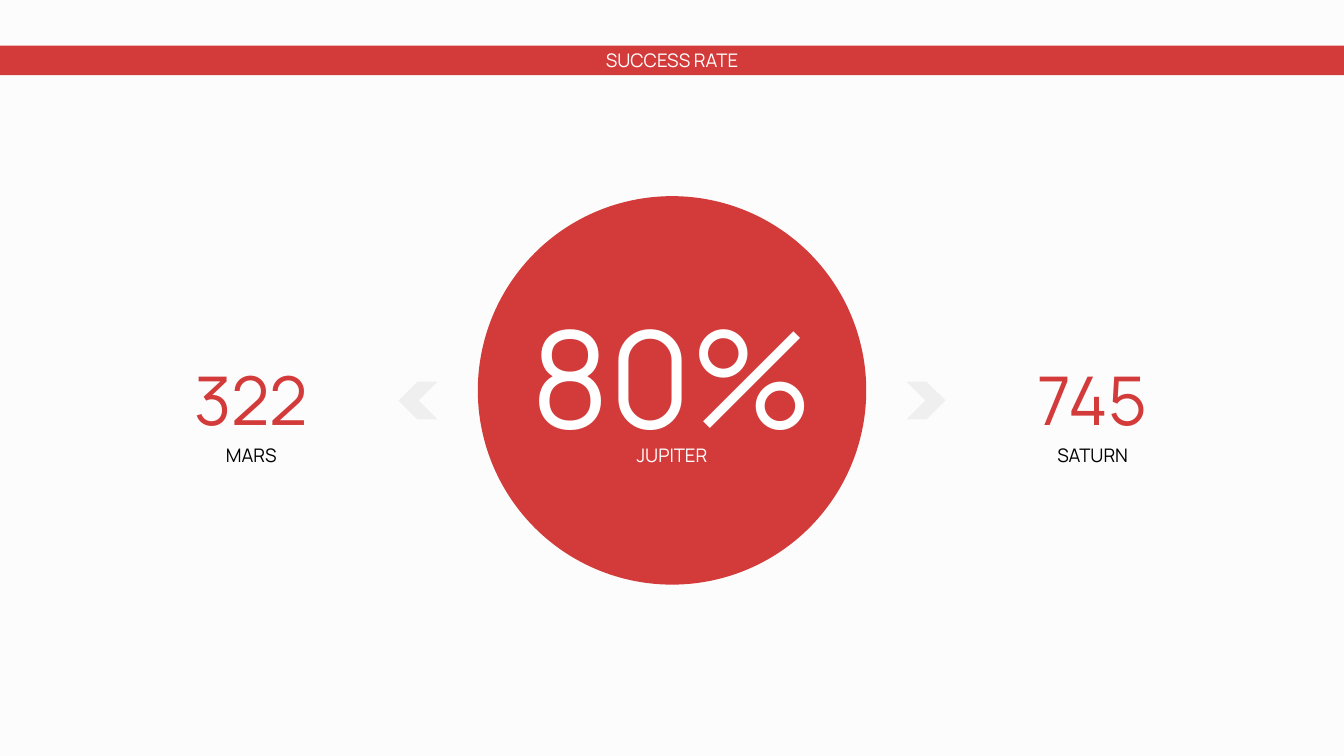
from pptx import Presentation
from pptx.dml.color import RGBColor
from pptx.enum.shapes import MSO_SHAPE
from pptx.enum.text import MSO_ANCHOR, MSO_AUTO_SIZE, PP_ALIGN
from pptx.util import Inches, Pt

COLORS = {"back": "FCFCFC", "red": "D33B3B", "white": "FFFFFF",
          "black": "000000", "gray": "EFEFEF"}
FONT = "Manrope"
WIDTH = 10
HEIGHT = WIDTH * 9 / 16
MID = WIDTH / 2


def paint(fill, color):
    fill.solid()
    fill.fore_color.rgb = RGBColor.from_string(COLORS[color])


def add_shape(slide, kind, left, top, width, height, color):
    shape = slide.shapes.add_shape(
        kind, Inches(left), Inches(top), Inches(width), Inches(height))
    shape.shadow.inherit = False
    paint(shape.fill, color)
    shape.line.fill.background()
    return shape


def set_text(box, text, size, color, anchor=MSO_ANCHOR.TOP):
    frame = box.text_frame
    frame.text = text
    frame.word_wrap = True
    frame.auto_size = MSO_AUTO_SIZE.NONE
    frame.vertical_anchor = anchor
    frame.margin_left = frame.margin_right = Inches(0.1)
    frame.margin_top = frame.margin_bottom = Inches(0.1)
    para = frame.paragraphs[0]
    para.alignment = PP_ALIGN.CENTER
    para.font.name = FONT
    para.font.size = Pt(size)
    para.font.color.rgb = RGBColor.from_string(COLORS[color])


def add_title(slide, text):
    """Fill the title placeholder and raise it above the bar."""
    title = slide.shapes.title
    title.left, title.top = Inches(0.34), Inches(0.26)
    title.width, title.height = Inches(9.32), Inches(0.36)
    set_text(title, text, 10, "white")
    slide.shapes._spTree.append(title._element)


def add_text(slide, mid, top, width, height, *style):
    box = slide.shapes.add_textbox(
        Inches(mid - width / 2), Inches(top), Inches(width), Inches(height))
    set_text(box, *style)


def add_stat(slide, mid, value, name, size, height, colors):
    """Place a large number, ending at a shared base, over its label."""
    add_text(slide, mid, 3.15 - height, 2.62, height,
             value, size, colors[0], MSO_ANCHOR.MIDDLE)
    add_text(slide, mid, 3.2, 1.8, 0.49, name, 10, colors[1])


def add_arrow(slide, mid, turn):
    width = 0.29
    arrow = add_shape(slide, MSO_SHAPE.CHEVRON, mid - width / 2, 2.84,
                      width, 0.28, "gray")
    arrow.rotation = turn


def main():
    prs = Presentation()
    prs.slide_width, prs.slide_height = Inches(WIDTH), Inches(HEIGHT)
    slide = prs.slides.add_slide(prs.slide_layouts[5])
    paint(slide.background.fill, "back")

    add_shape(slide, MSO_SHAPE.RECTANGLE, 0, 0.34, WIDTH, 0.22, "red")
    add_title(slide, "SUCCESS RATE")
    size = 2.89
    add_shape(slide, MSO_SHAPE.OVAL, MID - size / 2, 1.46, size, size, "red")
    add_stat(slide, MID, "80%", "JUPITER", 72, 0.73, ("white", "white"))

    sides = [(-1, "322", "MARS", 180), (1, "745", "SATURN", 0)]
    for side, value, name, turn in sides:
        add_stat(slide, MID + side * 3.13, value, name, 36, 0.36,
                 ("red", "black"))
        add_arrow(slide, MID + side * 1.89, turn)

    prs.save("out.pptx")


if __name__ == "__main__":
    main()
